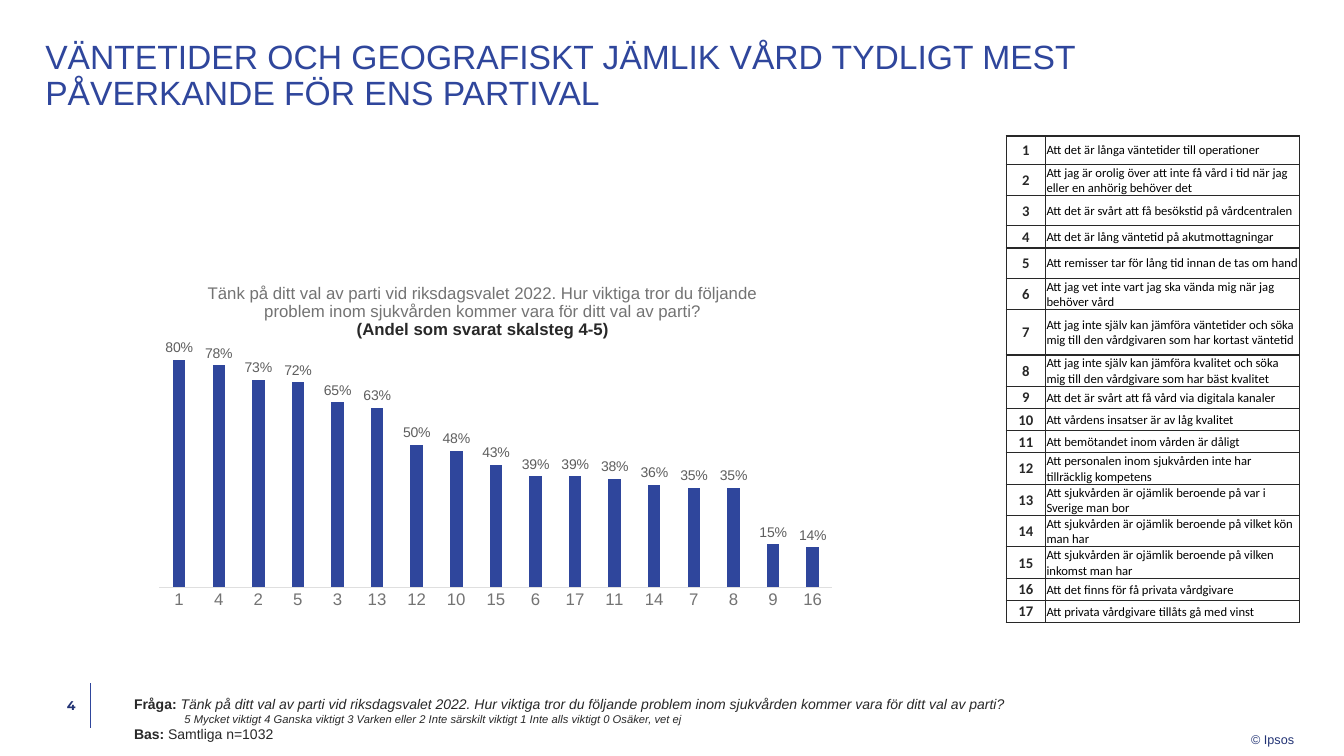
"""Build the slide on which health care issues affect the choice of party."""
from dataclasses import dataclass

from lxml.etree import SubElement
from pptx import Presentation
from pptx.chart.data import CategoryChartData
from pptx.dml.color import RGBColor as RGB
from pptx.enum.chart import XL_CHART_TYPE as CT, XL_LABEL_POSITION as LP
from pptx.enum.chart import XL_TICK_LABEL_POSITION as TLP, XL_TICK_MARK as TM
from pptx.enum.shapes import MSO_CONNECTOR as CONN
from pptx.enum.text import MSO_ANCHOR as ANCHOR, PP_ALIGN as ALIGN
from pptx.oxml import parse_xml
from pptx.oxml.ns import nsdecls, qn
from pptx.util import Inches, Pt


@dataclass(frozen=True)
class Theme:
    blue: str = "2F469C"
    navy: str = "233475"
    dark: str = "282828"
    black: str = "000000"
    grey: str = "737373"
    label: str = "5E5E5E"
    rule: str = "DFDFDF"
    font: str = "Arial"
    table_font: str = "Calibri"
    number_font: str = "Montserrat"
    title: float = 24
    heading: float = 12
    number: float = 10.5
    body: float = 10
    small: float = 9
    scale: float = 8


T = Theme()


def add_text(p, text, size=T.body, color=T.dark, font=T.font, bold=False, italic=False):
    r = p.add_run()
    r.text = text
    f = r.font
    f.size, f.name, f.bold, f.italic = Pt(size), font, bold, italic
    f.color.rgb = RGB.from_string(color)


def add_box(x, y, w, h, wrap=True):
    tf = s.shapes.add_textbox(Inches(x), Inches(y), Inches(w), Inches(h)).text_frame
    tf.margin_left = tf.margin_right = tf.margin_top = tf.margin_bottom = 0
    tf.word_wrap = wrap
    return tf


prs = Presentation()
prs.slide_width, prs.slide_height = Inches(13.33), Inches(7.5)
s = prs.slides.add_slide(prs.slide_layouts[6])

footer_line = s.shapes.add_connector(CONN.STRAIGHT, Inches(0.9), Inches(6.78), Inches(0.9), Inches(7.22))
footer_line.line.color.rgb = RGB.from_string(T.blue)
footer_line.line.width = Pt(0.5)
SubElement(footer_line._element.spPr, qn("a:effectLst"))

tf = add_box(12.41, 7.22, 0.43, 0.19, wrap=False)
tf.margin_top = Inches(0.04)
add_text(tf.paragraphs[0], "© Ipsos", size=T.small, color=T.navy)

tf = add_box(0.45, 6.78, 0.45, 0.43)
tf.margin_right = Inches(0.15)
tf.vertical_anchor = ANCHOR.MIDDLE
tf.paragraphs[0].alignment = ALIGN.RIGHT
add_text(tf.paragraphs[0], "4", size=T.small, color=T.navy, font=T.number_font, bold=True)

p = add_box(0.45, 0.4, 12.44, 0.75).paragraphs[0]
p.line_spacing = 0.9
add_text(p, "VÄNTETIDER OCH GEOGRAFISKT JÄMLIK VÅRD TYDLIGT MEST PÅVERKANDE FÖR ENS PARTIVAL",
         size=T.title, color=T.blue)

shares = [(1, 0.8), (4, 0.78), (2, 0.73), (5, 0.72), (3, 0.65), (13, 0.63), (12, 0.5), (10, 0.48),
          (15, 0.43), (6, 0.39), (17, 0.39), (11, 0.38), (14, 0.36), (7, 0.35), (8, 0.35),
          (9, 0.15), (16, 0.14)]
data = CategoryChartData(number_format="0%")
data.categories = [str(issue) for issue, _ in shares]
data.add_series("Series 1", [share for _, share in shares])
chart = s.shapes.add_chart(CT.COLUMN_CLUSTERED, Inches(1.16), Inches(2.11),
                           Inches(7.25), Inches(4.44), data).chart
chart.has_legend = False
chart.font.name, chart.font.size = T.font, Pt(T.body)
chart.font.color.rgb = RGB.from_string(T.dark)

tf = chart.chart_title.text_frame
question = ("Tänk på ditt val av parti vid riksdagsvalet 2022. Hur viktiga tror du följande "
            "problem inom sjukvården kommer vara för ditt val av parti?")
add_text(tf.paragraphs[0], question, size=T.heading, color=T.grey)
add_text(tf.add_paragraph(), "(Andel som svarat skalsteg 4-5)", size=T.heading, bold=True)
for p in tf.paragraphs:
    p.alignment = ALIGN.CENTER
    p.line_spacing = 0.9

plot = chart.plots[0]
plot.gap_width, plot.overlap, plot.vary_by_categories = 219, -27, False
bars = plot.series[0]
bars.format.fill.solid()
bars.format.fill.fore_color.rgb = RGB.from_string(T.blue)
plot.has_data_labels = True
labels = plot.data_labels
labels.show_value, labels.position = True, LP.OUTSIDE_END
labels.number_format, labels.number_format_is_linked = "0%", False
labels.font.name, labels.font.size = T.font, Pt(T.body)
labels.font.color.rgb = RGB.from_string(T.label)

issues_axis, share_axis = chart.category_axis, chart.value_axis
issues_axis.major_tick_mark = TM.NONE
issues_axis.tick_labels.font.name = T.font
issues_axis.tick_labels.font.size = Pt(T.heading)
issues_axis.tick_labels.font.color.rgb = RGB.from_string(T.grey)
issues_axis.format.line.color.rgb = RGB.from_string(T.rule)
issues_axis.format.line.width = Pt(0.75)
share_axis.minimum_scale, share_axis.maximum_scale = 0, 0.9
share_axis.has_major_gridlines = False
share_axis.tick_label_position = TLP.NONE
share_axis.visible = False

title_xml = chart.chart_title._element
plot_xml = chart._chartSpace.chart.plotArea
for parent, before, layout in [
    (title_xml, title_xml.find(qn("c:overlay")), {"xMode": "edge", "yMode": "edge", "x": 0.12, "y": 0.15}),
    (plot_xml, plot_xml.find(qn("c:barChart")),
     {"layoutTarget": "inner", "xMode": "edge", "yMode": "edge", "x": 0.058, "y": 0.265, "w": 0.921, "h": 0.572}),
]:
    for old in parent.findall(qn("c:layout")):
        parent.remove(old)
    tags = "".join(f'<c:{tag} val="{val}"/>' for tag, val in layout.items())
    before.addprevious(parse_xml(
        f'<c:layout {nsdecls("c")}><c:manualLayout>{tags}</c:manualLayout></c:layout>'))

issues = [
    (0.28, "Att det är långa väntetider till operationer"),
    (0.31, "Att jag är orolig över att inte få vård i tid när jag eller en anhörig behöver det"),
    (0.3, "Att det är svårt att få besökstid på vårdcentralen"),
    (0.22, "Att det är lång väntetid på akutmottagningar"),
    (0.3, "Att remisser tar för lång tid innan de tas om hand"),
    (0.31, "Att jag vet inte vart jag ska vända mig när jag behöver vård"),
    (0.45, "Att jag inte själv kan jämföra väntetider och söka mig till den vårdgivaren som har kortast väntetid"),
    (0.31, "Att jag inte själv kan jämföra kvalitet och söka mig till den vårdgivare som har bäst kvalitet"),
    (0.22, "Att det är svårt att få vård via digitala kanaler"),
    (0.22, "Att vårdens insatser är av låg kvalitet"),
    (0.22, "Att bemötandet inom vården är dåligt"),
    (0.31, "Att personalen inom sjukvården inte har tillräcklig kompetens"),
    (0.31, "Att sjukvården är ojämlik beroende på var i Sverige man bor"),
    (0.31, "Att sjukvården är ojämlik beroende på vilket kön man har"),
    (0.31, "Att sjukvården är ojämlik beroende på vilken inkomst man har"),
    (0.22, "Att det finns för få privata vårdgivare"),
    (0.22, "Att privata vårdgivare tillåts gå med vinst"),
]
table = s.shapes.add_table(len(issues), 2, Inches(9.98), Inches(1.35), Inches(2.91), Inches(4.79)).table
table.first_row = table.horz_banding = False
for column, width in zip(table.columns, (0.39, 2.52)):
    column.width = Inches(width)
for i, (height, issue) in enumerate(issues):
    table.rows[i].height = Inches(height)
    number_cell, issue_cell = table.cell(i, 0), table.cell(i, 1)
    for cell in (number_cell, issue_cell):
        cell.margin_left = cell.margin_right = cell.margin_top = Inches(0.01)
        cell.margin_bottom = 0
        cell.vertical_anchor = ANCHOR.MIDDLE
        tc_pr = cell._tc.get_or_add_tcPr()
        for side in ("lnL", "lnR", "lnT", "lnB"):
            tc_pr.append(parse_xml(
                f'<a:{side} {nsdecls("a")} w="{Pt(1)}"><a:solidFill>'
                f'<a:srgbClr val="{T.dark}"/></a:solidFill></a:{side}>'))
        cell.fill.background()
    p = number_cell.text_frame.paragraphs[0]
    p.alignment = ALIGN.CENTER
    add_text(p, str(i + 1), size=T.number, font=T.table_font, bold=True)
    add_text(issue_cell.text_frame.paragraphs[0], issue, size=T.small, color=T.black, font=T.table_font)

tf = add_box(1.33, 6.9, 8.74, 0.47, wrap=False)
p = tf.paragraphs[0]
add_text(p, "Fråga: ", bold=True)
add_text(p, question, italic=True)
add_text(tf.add_paragraph(), "\t5 Mycket viktigt 4 Ganska viktigt 3 Varken eller 2 Inte särskilt viktigt "
         "1 Inte alls viktigt 0 Osäker, vet ej", size=T.scale, italic=True)
p = tf.add_paragraph()
add_text(p, "Bas: ", bold=True)
add_text(p, "Samtliga n=1032")

prs.save("out.pptx")
